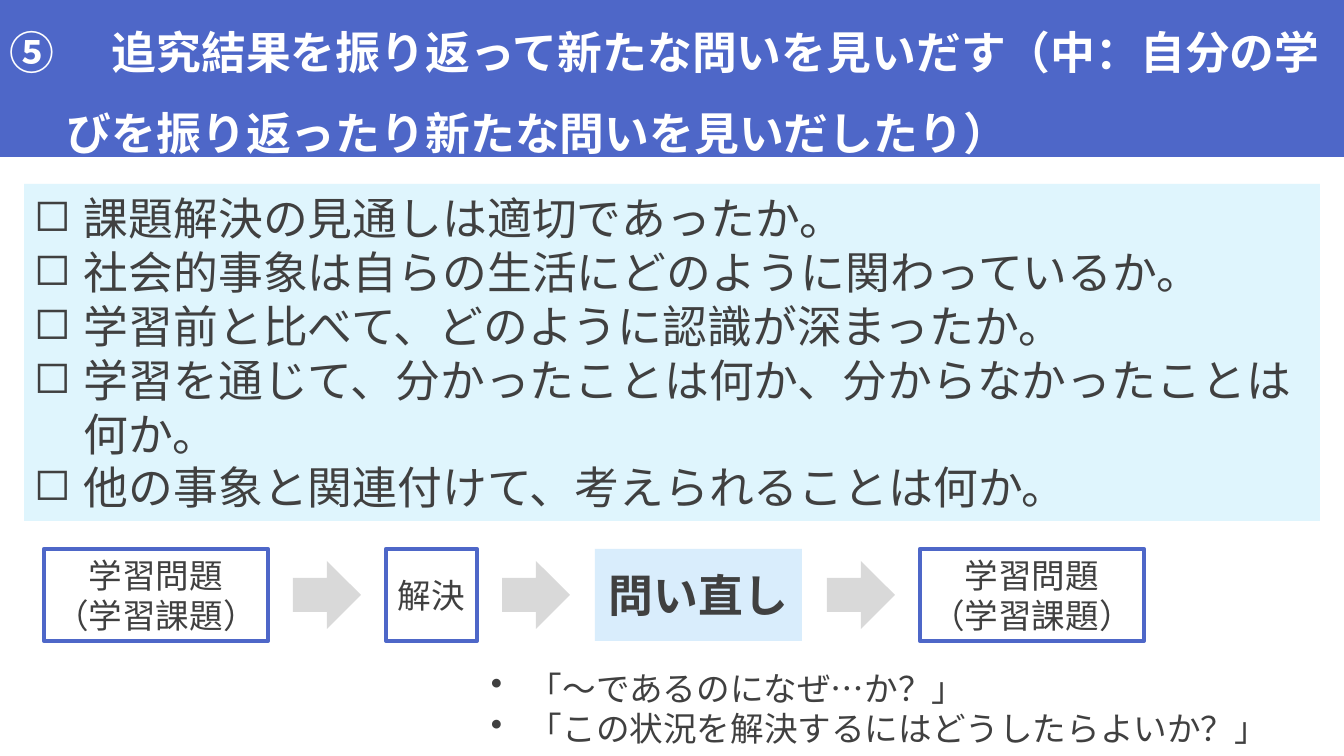
from lxml import etree
from pptx import Presentation
from pptx.dml.color import RGBColor
from pptx.enum.shapes import MSO_SHAPE
from pptx.enum.text import MSO_ANCHOR, PP_ALIGN
from pptx.oxml.ns import qn
from pptx.util import Emu, Pt

RECT, ARROW = MSO_SHAPE.RECTANGLE, MSO_SHAPE.RIGHT_ARROW
MIDDLE, LEFT, CENTER = MSO_ANCHOR.MIDDLE, PP_ALIGN.LEFT, PP_ALIGN.CENTER

BLUE = RGBColor(0x4E, 0x67, 0xC8)
PALE_CYAN = RGBColor(0xDF, 0xF5, 0xFD)
SKY = RGBColor(0xB4, 0xDC, 0xFA)
GREY = RGBColor(0xD9, 0xD9, 0xD9)
WHITE = RGBColor(0xFF, 0xFF, 0xFF)
INK = RGBColor(0x40, 0x40, 0x40)

FONT = "Noto Sans CJK JP"
LARGE, SMALL = 32, 24


def px(length):
    return Emu(round(length * 914400 / 100.8))


class SlideBuilder:
    def __init__(self, slide):
        self.shapes = slide.shapes

    def block(self, kind, box, fill, opacity=100, outline=None):
        block = self.shapes.add_shape(kind, *map(px, box))
        block.shadow.inherit = False
        block.fill.solid()
        block.fill.fore_color.rgb = fill
        if opacity < 100:
            color = block.fill._xPr.find(".//" + qn("a:srgbClr"))
            etree.SubElement(color, qn("a:alpha"), val=str(opacity * 1000))
        if outline is None:
            block.line.fill.background()
        else:
            block.line.color.rgb = outline
            block.line.width = Pt(3)
        return block

    def text_box(self, box):
        return self.shapes.add_textbox(*map(px, box))

    def set_text(self, holder, lines, size, color=INK, bold=False, align=LEFT,
                 indent=0, bullet=None, spacing=None):
        """Fill holder with one paragraph a line; bullet is (tag, attributes)."""
        frame = holder.text_frame
        frame.word_wrap = True
        frame.vertical_anchor = MIDDLE
        frame.text = "\n".join(lines)
        for paragraph in frame.paragraphs:
            paragraph.alignment = align
            if bullet:
                tag, attributes = bullet
                properties = paragraph._p.get_or_add_pPr()
                properties.set("marL", str(px(indent)))
                properties.set("indent", str(-px(indent)))
                etree.SubElement(properties, qn(tag), attributes)
            if spacing:
                paragraph.line_spacing = spacing
            font = paragraph.font
            font.size, font.bold, font.name = Pt(size), bold, FONT
            font.color.rgb = color
            etree.SubElement(font._rPr, qn("a:ea"), typeface=FONT)

    def flow(self, steps, left, top, height, gap, arrow_size):
        """Lay out (lines, width, emphasised) steps in a row with arrows between."""
        for number, (lines, width, emphasised) in enumerate(steps):
            if number:
                arrow_top = top + (height - arrow_size) // 2
                self.block(ARROW, (left, arrow_top, arrow_size, arrow_size), GREY)
                left += arrow_size + gap
            box = (left, top, width, height)
            if emphasised:
                step = self.block(RECT, box, SKY, opacity=50)
            else:
                step = self.block(RECT, box, WHITE, opacity=50, outline=BLUE)
            self.set_text(step, lines, LARGE if emphasised else SMALL,
                          bold=emphasised, align=CENTER)
            left += width + gap


def main():
    presentation = Presentation()
    presentation.slide_width, presentation.slide_height = px(1344), px(756)
    builder = SlideBuilder(presentation.slides.add_slide(presentation.slide_layouts[6]))

    heading = builder.block(RECT, (0, 0, 1344, 157), BLUE)
    builder.set_text(
        heading,
        ["　追究結果を振り返って新たな問いを見いだす（中：自分の学びを振り返ったり新たな問いを見いだしたり）"],
        LARGE, color=WHITE, bold=True, indent=57, spacing=1.5,
        bullet=("a:buAutoNum", {"type": "circleNumDbPlain", "startAt": "5"}))

    checklist = builder.block(RECT, (24, 184, 1296, 337), PALE_CYAN)
    builder.set_text(checklist, [
        "課題解決の見通しは適切であったか。",
        "社会的事象は自らの生活にどのように関わっているか。",
        "学習前と比べて、どのように認識が深まったか。",
        "学習を通じて、分かったことは何か、分からなかったことは何か。",
        "他の事象と関連付けて、考えられることは何か。",
    ], LARGE, indent=50, bullet=("a:buChar", {"char": "◻"}))

    learning_problem = (["学習問題", "（学習課題）"], 224, False)
    builder.flow([
        learning_problem,
        (["解決"], 91, False),
        (["問い直し"], 207, True),
        learning_problem,
    ], left=44, top=549, height=92, gap=25, arrow_size=68)

    question_examples = builder.text_box((481, 662, 849, 92))
    builder.set_text(question_examples, [
        "「〜であるのになぜ…か？」",
        "「この状況を解決するにはどうしたらよいか？」",
    ], SMALL, indent=38, bullet=("a:buChar", {"char": "•"}))

    presentation.save("out.pptx")


if __name__ == "__main__":
    main()
